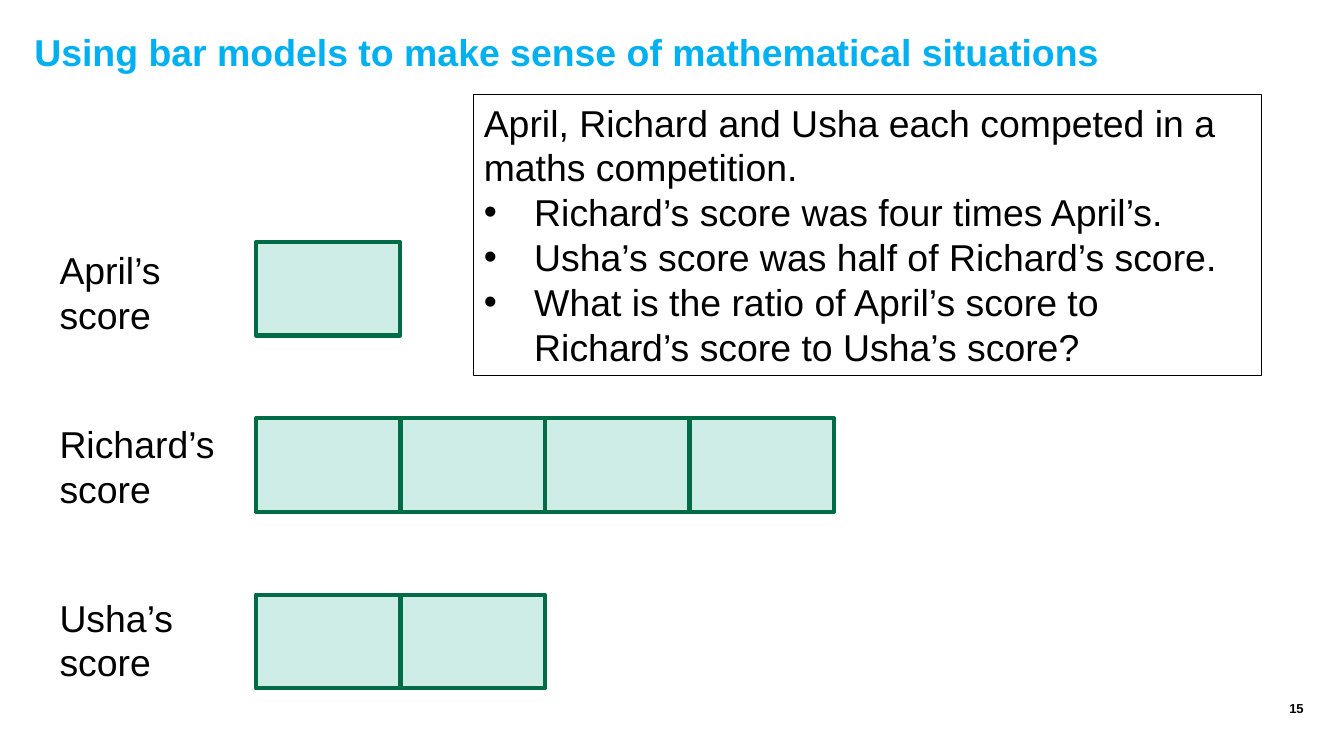
from dataclasses import dataclass

from lxml.etree import SubElement
from pptx import Presentation
from pptx.dml.color import RGBColor
from pptx.enum.shapes import MSO_SHAPE
from pptx.enum.text import MSO_ANCHOR, PP_ALIGN
from pptx.oxml.ns import qn
from pptx.util import Inches, Pt

TITLE = "Using bar models to make sense of mathematical situations"
INTRO = "April, Richard and Usha each competed in a maths competition."
POINTS = [
    "Richard’s score was four times April’s.",
    "Usha’s score was half of Richard’s score.",
    "What is the ratio of April’s score to Richard’s score to Usha’s score?",
]
BARS = [("April’s score", 1), ("Richard’s score", 4), ("Usha’s score", 2)]
PAGE = "15"


@dataclass(frozen=True)
class Theme:
    font: str = "Arial"
    body: float = 26.7
    small: float = 9.3
    ink: RGBColor = RGBColor(0, 0, 0)
    title: RGBColor = RGBColor(0x00, 0xB0, 0xF0)
    fill: RGBColor = RGBColor(0xCF, 0xED, 0xE7)
    edge: RGBColor = RGBColor(0x00, 0x6C, 0x47)


THEME = Theme()

# Bar grid, in inches
LEFT, TOP, WIDTH, HEIGHT = 2.54, 2.4, 1.43, 0.93
STEP_X, STEP_Y = 1.434, 1.75
LABEL_LEFT, LABEL_TOP, LABEL_STEP = 0.59, 2.45, 1.725


def style(para, size=THEME.body, color=THEME.ink, bold=False):
    font = para.font
    font.name, font.size, font.bold = THEME.font, Pt(size), bold
    font.color.rgb = color


def add_text(slide, text, box, **look):
    """Add a wrapped text box without margins and return its paragraph."""
    frame = slide.shapes.add_textbox(*map(Inches, box)).text_frame
    frame.word_wrap = True
    frame.margin_left = frame.margin_right = 0
    frame.margin_top = frame.margin_bottom = 0
    para = frame.paragraphs[0]
    para.text = text
    style(para, **look)
    return para


def add_rect(slide, box, fill, line, width):
    rect = slide.shapes.add_shape(MSO_SHAPE.RECTANGLE, *map(Inches, box))
    rect.shadow.inherit = False
    if fill is None:
        rect.fill.background()
    else:
        rect.fill.solid()
        rect.fill.fore_color.rgb = fill
    rect.line.color.rgb = line
    rect.line.width = Pt(width)
    return rect


def add_bullet(para):
    props = para._p.get_or_add_pPr()
    props.set("marL", str(Inches(0.5)))
    props.set("indent", str(-Inches(0.5)))
    SubElement(props, qn("a:buFont")).set("typeface", THEME.font)
    SubElement(props, qn("a:buChar")).set("char", "•")


def add_bars(slide):
    for row, (label, count) in enumerate(BARS):
        top = LABEL_TOP + row * LABEL_STEP
        add_text(slide, label, (LABEL_LEFT, top, 1.65, 0.9))
        for col in range(count):
            box = (LEFT + col * STEP_X, TOP + row * STEP_Y, WIDTH, HEIGHT)
            add_rect(slide, box, THEME.fill, THEME.edge, 3)


def add_problem(slide):
    rect = add_rect(slide, (4.7, 0.94, 7.81, 2.79), None, THEME.ink, 0.75)
    frame = rect.text_frame
    frame.word_wrap = True
    frame.vertical_anchor = MSO_ANCHOR.TOP
    for i, text in enumerate([INTRO, *POINTS]):
        para = frame.add_paragraph() if i else frame.paragraphs[0]
        para.text = text
        para.alignment = PP_ALIGN.LEFT
        if i:
            add_bullet(para)
        style(para)


def main():
    deck = Presentation()
    deck.slide_width, deck.slide_height = Inches(13.33), Inches(7.5)
    slide = deck.slides.add_slide(deck.slide_layouts[6])
    title = add_text(slide, TITLE, (0.34, 0.36, 12.3, 0.59),
                     color=THEME.title, bold=True)
    title.line_spacing = Pt(THEME.body)
    add_bars(slide)
    add_problem(slide)
    page = add_text(slide, PAGE, (11.6, 6.95, 1.33, 0.4),
                    size=THEME.small, bold=True)
    page.alignment = PP_ALIGN.RIGHT
    deck.save("out.pptx")


if __name__ == "__main__":
    main()
